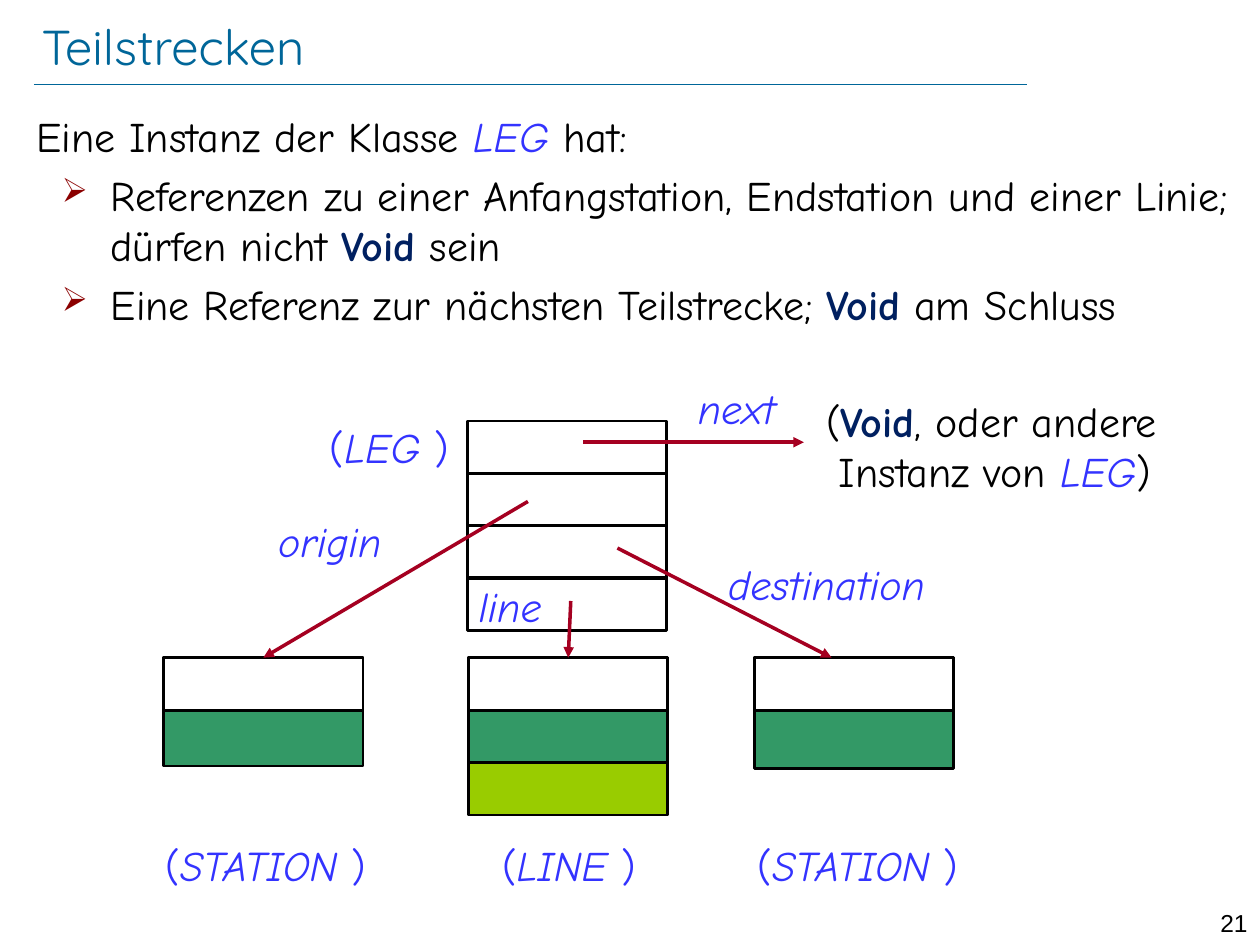
"""Build the slide on route legs and the objects they refer to."""
from lxml import etree
from pptx import Presentation, util as u
from pptx.dml.color import RGBColor
from pptx.enum import shapes, text
from pptx.oxml.ns import qn

TEAL = RGBColor(0x00, 0x66, 0x99)
BLACK = RGBColor(0x00, 0x00, 0x00)
WHITE = RGBColor(0xFF, 0xFF, 0xFF)
BLUE = RGBColor(0x33, 0x33, 0xFF)
NAVY = RGBColor(0x00, 0x20, 0x60)
GREEN = RGBColor(0x33, 0x99, 0x66)
LIME = RGBColor(0x99, 0xCC, 0x00)
RED = RGBColor(0xA5, 0x00, 0x21)
BULLET = "8B0000"

CLASS_NAME = dict(color=BLUE, italic=True)
KEYWORD = dict(color=NAVY, bold=True)
BRACKET = dict(color=BLUE)


def write(paragraph, words, color=BLACK, size=24, font="Comic Neue", bold=False, italic=False):
    run = paragraph.add_run()
    run.text = words
    run.font.name, run.font.size = font, u.Pt(size)
    run.font.bold, run.font.italic = bold, italic
    run.font.color.rgb = color


def draw_line(start, end, color, width, arrow=True):
    line = slide.shapes.add_connector(
        shapes.MSO_CONNECTOR.STRAIGHT, *[u.Inches(v) for v in (*start, *end)])
    line.line.color.rgb, line.line.width = color, u.Pt(width)
    properties = line._element.spPr
    if arrow:
        etree.SubElement(properties.find(qn("a:ln")), qn("a:tailEnd"), type="triangle")
    etree.SubElement(properties, qn("a:effectLst"))
    return line


deck = Presentation()
deck.slide_width, deck.slide_height = u.Inches(10), u.Inches(7.5)
slide = deck.slides.add_slide(deck.slide_layouts[6])

draw_line((0.27, 0.67), (8.15, 0.67), TEAL, 0.25, arrow=False)

heading = slide.shapes.add_textbox(*[u.Inches(v) for v in (0.33, 0.13, 8.23, 0.47)]).text_frame
heading.word_wrap = True
heading.vertical_anchor = text.MSO_ANCHOR.MIDDLE
heading.margin_left = heading.margin_right = heading.margin_top = heading.margin_bottom = 0
write(heading.paragraphs[0], "Teilstrecken", color=TEAL, size=28, font="Quicksand")

body = slide.shapes.add_textbox(*[u.Inches(v) for v in (0.19, 0.83, 9.68, 5.59)]).text_frame
body.word_wrap = True
intro = body.paragraphs[0]
write(intro, "Eine Instanz der Klasse ")
write(intro, "LEG ", **CLASS_NAME)
write(intro, "hat:")
for before, after in [
    ("Referenzen zu einer Anfangstation, Endstation und einer Linie; dürfen nicht ", " sein"),
    ("Eine Referenz zur nächsten Teilstrecke; ", " am Schluss"),
]:
    point = body.add_paragraph()
    point.level = 1
    point.space_before = u.Pt(4.8)
    layout = point._p.get_or_add_pPr()
    layout.set("marL", str(u.Inches(0.59)))
    layout.set("indent", str(u.Inches(-0.39)))
    bullet_color = etree.SubElement(layout, qn("a:buClr"))
    etree.SubElement(bullet_color, qn("a:srgbClr"), val=BULLET)
    etree.SubElement(layout, qn("a:buSzPct"), val="80000")
    etree.SubElement(layout, qn("a:buChar"), char="➢")
    write(point, before)
    write(point, "Void", **KEYWORD)
    write(point, after)

CELL_W, CELL_H, PITCH = 1.58, 0.42, 0.415
LEFT, MIDDLE, RIGHT = 1.3, 3.72, 5.99
LEG_TOP, TARGET_TOP = 3.34, 5.22

leg_fields = [(MIDDLE - 0.01, LEG_TOP + PITCH * row, CELL_H, None) for row in range(4)]
targets = [
    (LEFT, TARGET_TOP, 0.86, GREEN), (LEFT, TARGET_TOP, CELL_H, WHITE),
    (RIGHT, TARGET_TOP, 0.88, GREEN), (RIGHT, TARGET_TOP, CELL_H, WHITE),
    (MIDDLE, TARGET_TOP, 3 * PITCH, GREEN), (MIDDLE, TARGET_TOP, CELL_H, WHITE),
    (MIDDLE, TARGET_TOP + 2 * PITCH, CELL_H, LIME),
]
heads = {}
for left, top, height, color in leg_fields + targets:
    field = slide.shapes.add_shape(
        shapes.MSO_SHAPE.RECTANGLE, *[u.Inches(v) for v in (left, top, CELL_W, height)])
    field.shadow.inherit = False
    field.line.color.rgb, field.line.width = BLACK, u.Pt(1.5)
    if color is None:
        field.fill.background()
    else:
        field.fill.solid()
        field.fill.fore_color.rgb = color
    if color == WHITE:
        heads[left] = field

draw_line((4.63, 3.51), (6.38, 3.51), RED, 2)
draw_line((4.9, 4.35), (6.6, TARGET_TOP), RED, 2)
for start, column in [((4.19, 3.98), LEFT), ((4.53, 4.77), MIDDLE)]:
    reference = draw_line(start, (column + CELL_W / 2, TARGET_TOP), RED, 2)
    reference.end_connect(heads[column], 0)

START, CENTER, END = text.PP_ALIGN.LEFT, text.PP_ALIGN.CENTER, text.PP_ALIGN.RIGHT
labels = [
    (2.52, 3.3, 1.18, 0.5, START, [("(", BRACKET), ("LEG ", CLASS_NAME), (")", BRACKET)]),
    (5.44, 2.99, 1.22, 0.5, START, [("next", CLASS_NAME)]),
    (2.11, 4.04, 1.14, 0.5, START, [("origin", CLASS_NAME)]),
    (5.68, 4.38, 2.16, 0.5, START, [("destination", CLASS_NAME)]),
    (3.7, 4.56, 2.16, 0.5, START, [("line", CLASS_NAME)]),
    (6.46, 3.09, 3.26, 0.91, START, [
        ("(", {}), ("Void", KEYWORD), (", oder andere", {}), None,
        ("Instanz von ", {}), ("LEG", CLASS_NAME), (")", {})]),
    (9.45, 7.16, 0.55, 0.24, END, [("21", dict(size=14, font="Arial"))]),
]
for left, width, name in [(0.96, 2.3, "STATION "), (MIDDLE, 1.59, "LINE "), (5.66, 2.3, "STATION ")]:
    labels.append((left, 6.61, width, 0.5, CENTER,
                   [("(", BRACKET), (name, CLASS_NAME), (")", BRACKET)]))

for *place, alignment, parts in labels:
    label = slide.shapes.add_textbox(*[u.Inches(v) for v in place]).text_frame
    label.word_wrap = True
    caption = label.paragraphs[0]
    caption.alignment = alignment
    if None in parts:
        hanging = caption._p.get_or_add_pPr()
        hanging.set("marL", str(u.Inches(0.1)))
        hanging.set("indent", str(u.Inches(-0.1)))
    for part in parts:
        if part is None:
            caption.add_line_break()
        else:
            write(caption, part[0], **part[1])

deck.save("out.pptx")
